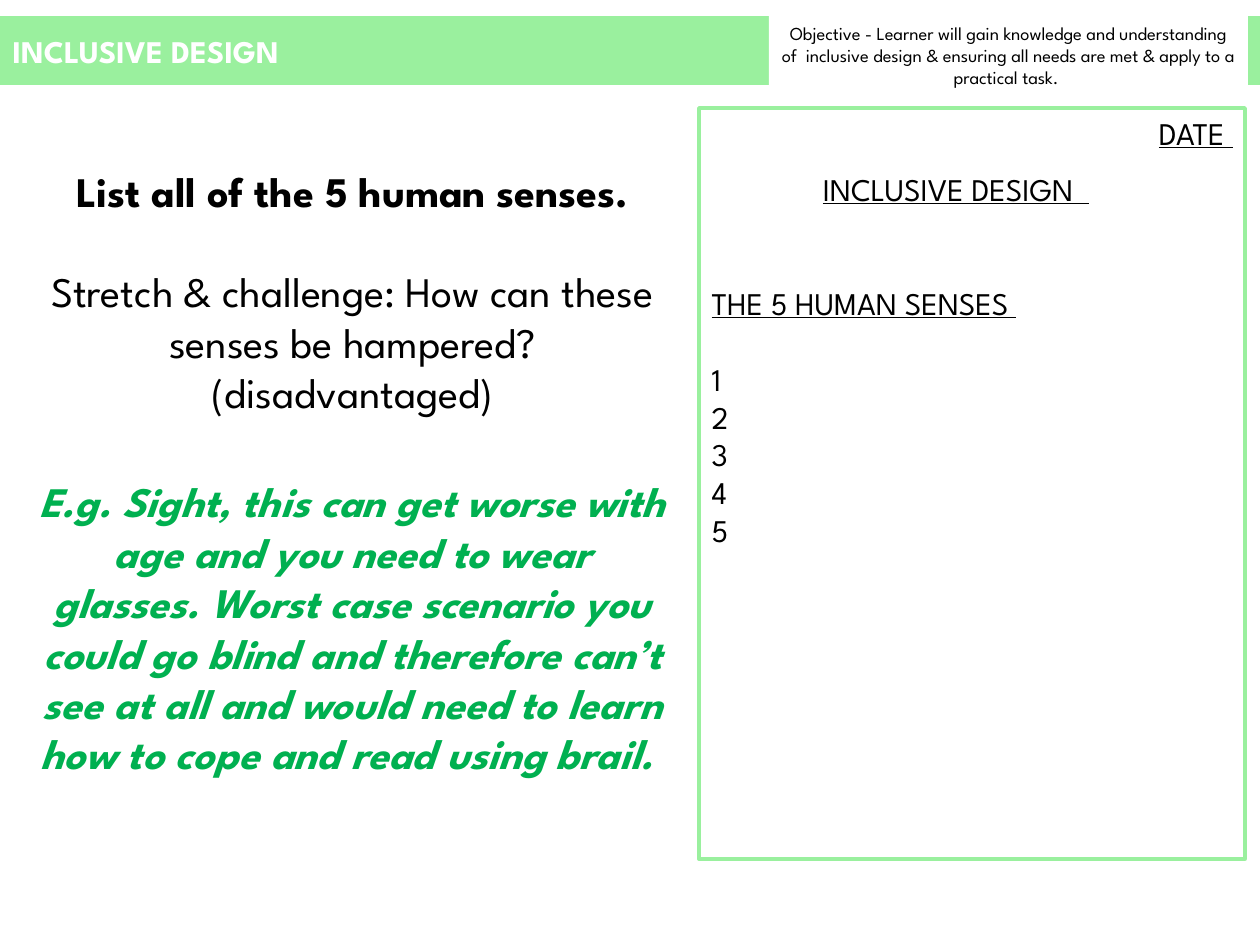
from lxml.etree import SubElement
from pptx import Presentation
from pptx.dml.color import RGBColor
from pptx.enum.shapes import MSO_SHAPE
from pptx.enum.text import MSO_ANCHOR as ANCHOR, MSO_AUTO_SIZE as AUTO, PP_ALIGN as ALIGN
from pptx.oxml.ns import qn
from pptx.util import Pt

PX = 914400 / 126
FONT = "League Spartan"
COLORS = {"mint": "9AF09E", "green": "00B050", "black": "000000", "white": "FFFFFF"}


def emu(*px):
    return [round(v * PX) for v in px]


def rgb(name):
    return RGBColor.from_string(COLORS[name])


def place(sp, x, y, w, h):
    sp.left, sp.top, sp.width, sp.height = emu(x, y, w, h)


def add_rect(s, box, fill=None, line=None):
    sp = s.shapes.add_shape(MSO_SHAPE.RECTANGLE, *emu(*box))
    sp.shadow.inherit = False
    if fill:
        sp.fill.solid()
        sp.fill.fore_color.rgb = rgb(fill)
    else:
        sp.fill.background()
    if line:
        sp.line.color.rgb = rgb(line)
        sp.line.width = Pt(2)
    else:
        sp.line.fill.background()
    return sp


def set_text(sp, lines, anchor=ANCHOR.TOP):
    tf = sp.text_frame
    tf.word_wrap = True
    tf.auto_size = AUTO.NONE
    tf.vertical_anchor = anchor
    tf.text = "\n".join(lines)
    return tf.paragraphs


def format_text(p, size, align=ALIGN.LEFT, color="black", bold=False, italic=False,
                underline=False, before=0):
    p.alignment = align
    p.space_before = Pt(before)
    for r in p.runs:
        f = r.font
        f.name, f.size = FONT, Pt(size)
        f.bold, f.italic, f.underline = bold, italic, underline
        f.color.rgb = rgb(color)


def remove_bullet(p):
    pPr = p._p.get_or_add_pPr()
    pPr.set("marL", "0")
    pPr.set("indent", "0")
    SubElement(pPr, qn("a:buNone"))


def add_header(s, x, y, w, h):
    title = s.shapes.title
    place(title, x, y, w, h)
    title.fill.solid()
    title.fill.fore_color.rgb = rgb("mint")
    p, = set_text(title, ["INCLUSIVE DESIGN"], ANCHOR.MIDDLE)
    format_text(p, 18, color="white", bold=True)

    objective = add_rect(s, (x + 769, y, 479, h + 10), fill="white")
    p, = set_text(objective, [
        "Objective - Learner will gain knowledge and understanding of  inclusive design "
        "& ensuring all needs are met & apply to a practical task. "])
    format_text(p, 10.5, ALIGN.CENTER)


def add_task(s, x, y, w, h):
    sp = s.shapes.add_textbox(*emu(x, y, w, h))
    task, stretch, example = set_text(sp, [
        "List all of the 5 human senses.",
        "Stretch & challenge: How can these senses be hampered? (disadvantaged)",
        "E.g. Sight, this can get worse with age and you need to wear glasses. "
        "Worst case scenario you could go blind and therefore can’t see at all "
        "and would need to learn how to cope and read using brail.  "])
    format_text(task, 24, ALIGN.CENTER, bold=True)
    format_text(stretch, 24, ALIGN.CENTER, before=28.8)
    format_text(example, 24, ALIGN.CENTER, "green", bold=True, italic=True, before=33.6)


def add_notebook(s, x, y, w, h):
    add_rect(s, (x, y, w, h), line="mint")
    headings = [
        ("DATE ", (x + w - 185, y, 185, 50), ALIGN.RIGHT),
        ("INCLUSIVE DESIGN  ", (x + 24, y + 56, 466, 50), ALIGN.CENTER),
    ]
    for text, box, align in headings:
        p, = set_text(s.shapes.add_textbox(*emu(*box)), [text])
        format_text(p, 18, align, underline=True)

    body = s.placeholders[1]
    place(body, x, y + 170, 430, 318)
    numbers = [str(n) for n in range(1, 6)]
    for i, p in enumerate(set_text(body, ["THE 5 HUMAN SENSES "] + numbers)):
        format_text(p, 18, underline=i == 0, before=21.6 if i == 1 else 0)
        remove_bullet(p)


def main():
    prs = Presentation()
    prs.slide_width, prs.slide_height = emu(1260, 945)
    s = prs.slides.add_slide(prs.slide_layouts[1])
    add_header(s, 0, 16, 1260, 69)
    add_task(s, 25, 159, 655, 680)
    add_notebook(s, 699, 108, 546, 751)
    prs.save("out.pptx")


if __name__ == "__main__":
    main()
